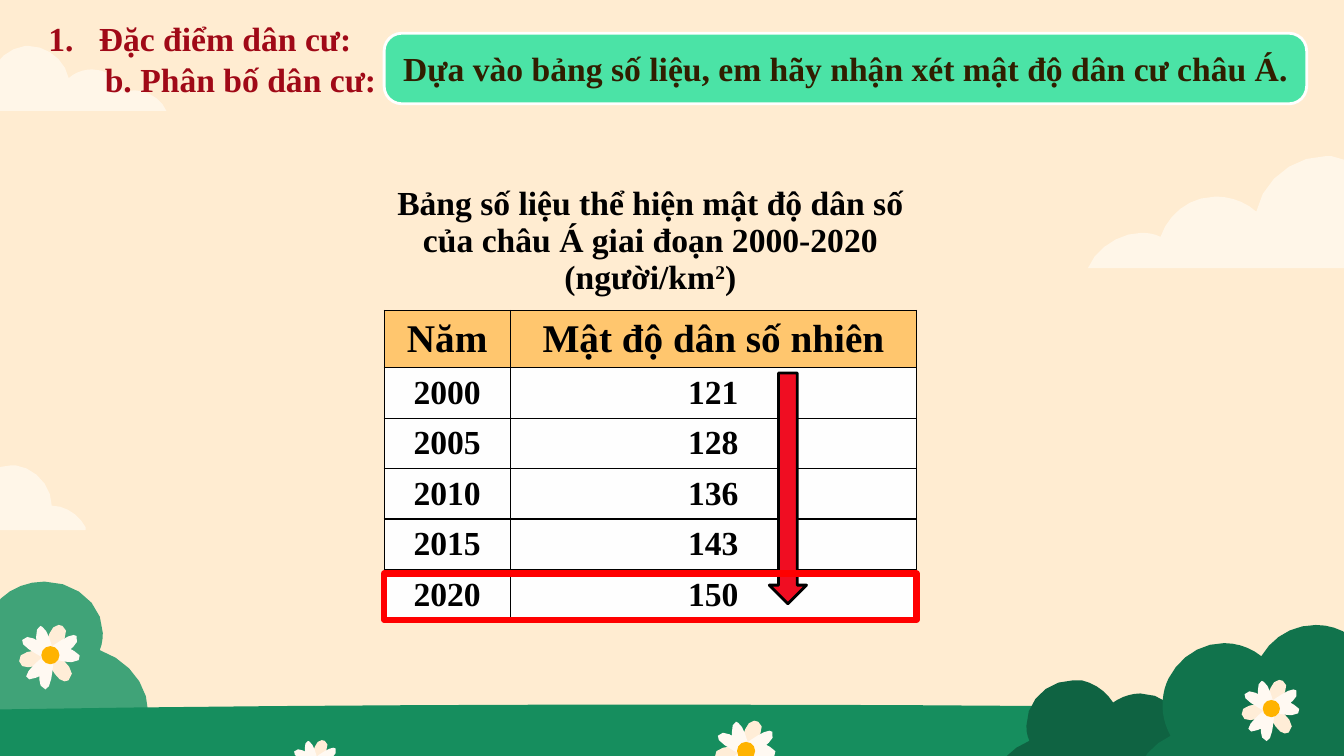
from math import ceil, dist

from lxml import etree
from pptx import Presentation
from pptx.dml.color import RGBColor
from pptx.enum.shapes import MSO_SHAPE as Preset
from pptx.enum.text import MSO_ANCHOR as Anchor, MSO_AUTO_SIZE as AutoSize, PP_ALIGN as Align
from pptx.oxml import parse_xml
from pptx.oxml.ns import nsdecls, qn
from pptx.util import Inches, Pt

SLIDE_WIDTH, SLIDE_HEIGHT = 13.33, 7.5
FONT = "Times New Roman"
SAND, CREAM, PETAL, WHITE_PETAL, YOLK = "FFECD1", "FFF6E8", "FFEDD7", "FFF9F2", "FFB300"

HEADING = ["Đặc điểm dân cư:", "b. Phân bố dân cư:"]
QUESTION = "Dựa vào bảng số liệu, em hãy nhận xét mật độ dân cư châu Á."
CAPTION = [("Bảng số liệu thể hiện mật độ dân số của châu Á giai đoạn 2000-2020 (người/km", None),
           ("2", "30000"), (")", None)]
DENSITY = [("Năm", "Mật độ dân số nhiên"), ("2000", "121"), ("2005", "128"),
           ("2010", "136"), ("2015", "143"), ("2020", "150")]

TABLE_LEFT, TABLE_TOP = 3.81, 1.79
COLUMNS = [1.25, 4.03]
CAPTION_ROW, HEADER_ROW, BODY_ROW = 1.29, 0.57, 0.5

# Outlines in hundredths of an inch: a start, then lines (x, y) or curves (two handles, end)
CLOUD = [(235, -111), (204, -111, 173, -87, 167, -56), (156, -66, 141, -71, 127, -71),
         (112, -69), (93, -64, 78, -49, 72, -31), (66, -34, 60, -35, 53, -35),
         (32, -35, 8, -20, 0, 0), (362, 0), (362, -5), (351, -26, 328, -42, 304, -42),
         (304, -76, 275, -107, 242, -111)]
LEFT_BUSH = [(44, 577), (23, 577, 4, 587, -6, 602), (-16, 596, -28, 592, -41, 592),
             (-73, 592, -99, 615, -99, 644), (-99, 653, -96, 661, -91, 669),
             (-111, 677, -125, 695, -125, 716), (-125, 744, -99, 767, -67, 767),
             (73, 773), (114, 773, 147, 744, 147, 707), (147, 679, 127, 655, 99, 645),
             (101, 640, 102, 634, 102, 628), (102, 600, 76, 577, 44, 577)]
HILL = [(665, 699), (464, 699, 232, 700, -13, 704), (-11, 796), (1346, 796), (1344, 704),
        (1344, 704, 1067, 699, 665, 699)]
DARK_BUSH = [(1064, 675), (1039, 675, 1018, 695, 1018, 720), (1018, 726, 1019, 731, 1021, 735),
             (998, 744, 982, 765, 982, 791), (1197, 791), (1195, 775, 1185, 763, 1171, 756),
             (1175, 750, 1177, 742, 1177, 734), (1177, 709, 1156, 688, 1131, 688),
             (1121, 688, 1111, 692, 1104, 697), (1097, 686, 1086, 678, 1073, 675)]
RIGHT_BUSH = [(1305, 620), (1282, 620, 1262, 632, 1251, 651), (1241, 643, 1228, 638, 1214, 638),
              (1190, 638, 1169, 653, 1159, 673), (1155, 681, 1153, 690, 1153, 700),
              (1153, 711, 1156, 721, 1161, 730), (1139, 740, 1124, 761, 1124, 788),
              (1346, 788), (1346, 636), (1335, 626, 1321, 620, 1305, 620)]
FLOWER = {
    PETAL: [
        [(5, -1), (-3, 5), (-3, 6, 6, 26, 14, 26), (18, 25), (30, 15, 5, -1, 5, -1)],
        [(8, -30), (-2, -30, -5, -6, -5, -6), (4, -2), (5, -2, 23, -24, 12, -29)],
        [(-5, -5), (-5, -5, -34, -6, -31, 6), (-30, 11, -27, 12, -22, 12),
         (-14, 12, -2, 5, -2, 5)]],
    WHITE_PETAL: [
        [(23, -20), (16, -20, -2, -6, -2, -6), (0, 3), (0, 3, 12, 7, 21, 7), (28, 5),
         (35, 1, 20, -6, 20, -6), (20, -6, 30, -13, 26, -19)],
        [(-10, -29), (-15, -29, -14, -15, -14, -15), (-14, -15, -18, -18, -23, -18),
         (-28, -15), (-32, -9, -4, 4, -4, 4), (3, -2), (3, -2, -1, -24, -8, -28)],
        [(-5, 0), (-5, 0, -23, 13, -24, 21), (-21, 24), (-17, 24, -11, 21, -11, 21),
         (-11, 21, -12, 33, -5, 34), (2, 34, 3, 4, 3, 4)]],
    YOLK: [
        [(0, -9), (-5, -9, -9, -5, -9, 0), (-9, 5, -5, 9, 0, 9),
         (5, 9, 9, 5, 9, 0), (9, -5, 5, -9, 0, -9)]],
}
FLOWER_PLACES = [(0.5, 6.5, 1), (3.13, 7.57, 0.76), (7.4, 7.45, 1), (12.61, 7.03, 0.95)]
# outlines, colour, origin x, origin y, horizontal scale, vertical scale
SCENERY = [([CLOUD], CREAM, 10.79, 2.66, 1, 1), ([LEFT_BUSH], "40A378", 0, 0, 1, 1),
           ([HILL], "168E5E", 0, 0, 1, 1), ([DARK_BUSH], "0F6342", 0, 0, 1, 1),
           ([RIGHT_BUSH], "11734C", 0, 0, 1, 1)]
SCENERY += [(petals, color, x, y, scale, scale)
            for x, y, scale in FLOWER_PLACES for color, petals in FLOWER.items()]
SCENERY += [([CLOUD], CREAM, 1.65, 1.1, -0.58, 0.58), ([CLOUD], CREAM, -1.25, 5.26, 0.58, 0.58)]


def rgb(color):
    return RGBColor.from_string(color)


def paint(shape, fill=None, line=None, width=0):
    shape.shadow.inherit = False
    for target, color in ((shape.fill, fill), (shape.line.fill, line)):
        if color:
            target.solid()
            target.fore_color.rgb = rgb(color)
        else:
            target.background()
    if line:
        shape.line.width = Pt(width)


def write(paragraph, pieces, size, color, align):
    """Add (text, baseline) pieces as bold runs of one look."""
    paragraph.alignment = align
    for text, baseline in pieces:
        run = paragraph.add_run()
        run.text = text
        for name, value in {"name": FONT, "size": Pt(size), "bold": True}.items():
            setattr(run.font, name, value)
        run.font.color.rgb = rgb(color)
        if baseline:
            run.font._element.set("baseline", baseline)


def flatten(outline):
    """Turn lines and Bézier curves into points, with more steps for longer curves."""
    points = [outline[0]]
    for segment in outline[1:]:
        if len(segment) == 2:
            points.append(segment)
            continue
        controls = [points[-1], segment[:2], segment[2:4], segment[4:]]
        steps = min(5, ceil(dist(controls[0], controls[3]) / 6))
        for step in range(1, steps + 1):
            t = step / steps
            weights = ((1 - t) ** 3, 3 * t * (1 - t) ** 2, 3 * t * t * (1 - t), t ** 3)
            points.append(tuple(sum(w * c[axis] for w, c in zip(weights, controls))
                                for axis in (0, 1)))
    return points


def add_scenery(slide, outlines, color, left, top, x_scale, y_scale):
    """Draw the outlines that reach the slide as one shape."""
    placed = [[(Inches(left + x * x_scale / 100), Inches(top + y * y_scale / 100))
               for x, y in flatten(outline)] for outline in outlines]
    visible = [points for points in placed if min(y for _, y in points) < Inches(SLIDE_HEIGHT)]
    if not visible:
        return
    builder = slide.shapes.build_freeform(*visible[0][0])
    for index, points in enumerate(visible):
        if index:
            builder.move_to(*points[0])
        builder.add_line_segments(points[1:], close=True)
    paint(builder.convert_to_shape(), color)


def add_block(slide, preset, box, **look):
    shape = slide.shapes.add_shape(preset, *map(Inches, box))
    paint(shape, **look)
    return shape


def set_borders(cell, sides):
    properties = cell._tc.get_or_add_tcPr()
    for side in "LRTB":
        ink = '<a:solidFill><a:srgbClr val="000000"/></a:solidFill>' if side in sides else "<a:noFill/>"
        properties.append(parse_xml(f'<a:ln{side} {nsdecls("a")} w="12700">{ink}</a:ln{side}>'))


def add_heading(slide):
    title = slide.shapes.title
    slide.shapes._spTree.append(title._element)
    for name, value in zip(("left", "top", "width", "height"), (0.38, 0.13, 6.29, 0.91)):
        setattr(title, name, Inches(value))
    frame = title.text_frame
    for name, value in {"word_wrap": True, "auto_size": AutoSize.NONE,
                        "vertical_anchor": Anchor.TOP}.items():
        setattr(frame, name, value)
    for index, (text, margin, indent) in enumerate(zip(HEADING, (0.5, 0), (-0.5, 0.56))):
        paragraph = frame.add_paragraph() if index else frame.paragraphs[0]
        properties = paragraph._p.get_or_add_pPr()
        properties.set("marL", str(Inches(margin)))
        properties.set("indent", str(Inches(indent)))
        if index == 0:
            etree.SubElement(properties, qn("a:buFont"), typeface="+mj-lt")
            etree.SubElement(properties, qn("a:buAutoNum"), type="arabicPeriod")
        write(paragraph, [(text, None)], 24, "A00917", Align.LEFT)


def add_density_table(slide):
    heights = [CAPTION_ROW, HEADER_ROW] + [BODY_ROW] * (len(DENSITY) - 1)
    box = (TABLE_LEFT, TABLE_TOP, sum(COLUMNS), sum(heights))
    table = slide.shapes.add_table(len(heights), len(COLUMNS), *map(Inches, box)).table
    table.first_row = table.horz_banding = False
    for column, width in zip(table.columns, COLUMNS):
        column.width = Inches(width)
    for row, height in zip(table.rows, heights):
        row.height = Inches(height)
    caption = table.cell(0, 0)
    caption.merge(table.cell(0, 1))
    write(caption.text_frame.paragraphs[0], CAPTION, 24, "000000", Align.CENTER)
    for cell in table.rows[0].cells:
        set_borders(cell, "B")
        cell.fill.background()
    for row_index, values in enumerate(DENSITY, 1):
        size, fill = (28, "FFC66E") if row_index == 1 else (24, "FEFEFE")
        for column_index, value in enumerate(values):
            cell = table.cell(row_index, column_index)
            set_borders(cell, "LRTB")
            cell.fill.solid()
            cell.fill.fore_color.rgb = rgb(fill)
            cell.vertical_anchor = Anchor.MIDDLE
            write(cell.text_frame.paragraphs[0], [(value, None)], size, "000000", Align.CENTER)


def main():
    presentation = Presentation()
    presentation.slide_width, presentation.slide_height = Inches(SLIDE_WIDTH), Inches(SLIDE_HEIGHT)
    slide = presentation.slides.add_slide(presentation.slide_layouts[5])
    slide.background.fill.solid()
    slide.background.fill.fore_color.rgb = rgb(SAND)
    for item in SCENERY:
        add_scenery(slide, *item)
    add_heading(slide)
    banner = add_block(slide, Preset.ROUNDED_RECTANGLE, (3.81, 0.33, 9.15, 0.7),
                       fill="4BE3A6", line="FFFFFF", width=2)
    banner.adjustments[0] = 0.25
    banner.text_frame.word_wrap = True
    banner.text_frame.vertical_anchor = Anchor.MIDDLE
    write(banner.text_frame.paragraphs[0], [(QUESTION, None)], 24, "311E00", Align.CENTER)
    add_density_table(slide)
    add_block(slide, Preset.DOWN_ARROW, (7.63, 3.7, 0.37, 2.29),
              fill="F00D22", line="000000", width=2)
    add_block(slide, Preset.RECTANGLE, (TABLE_LEFT, 5.69, sum(COLUMNS), 0.46),
              line="FF0000", width=4.5)
    presentation.save("out.pptx")


if __name__ == "__main__":
    main()
